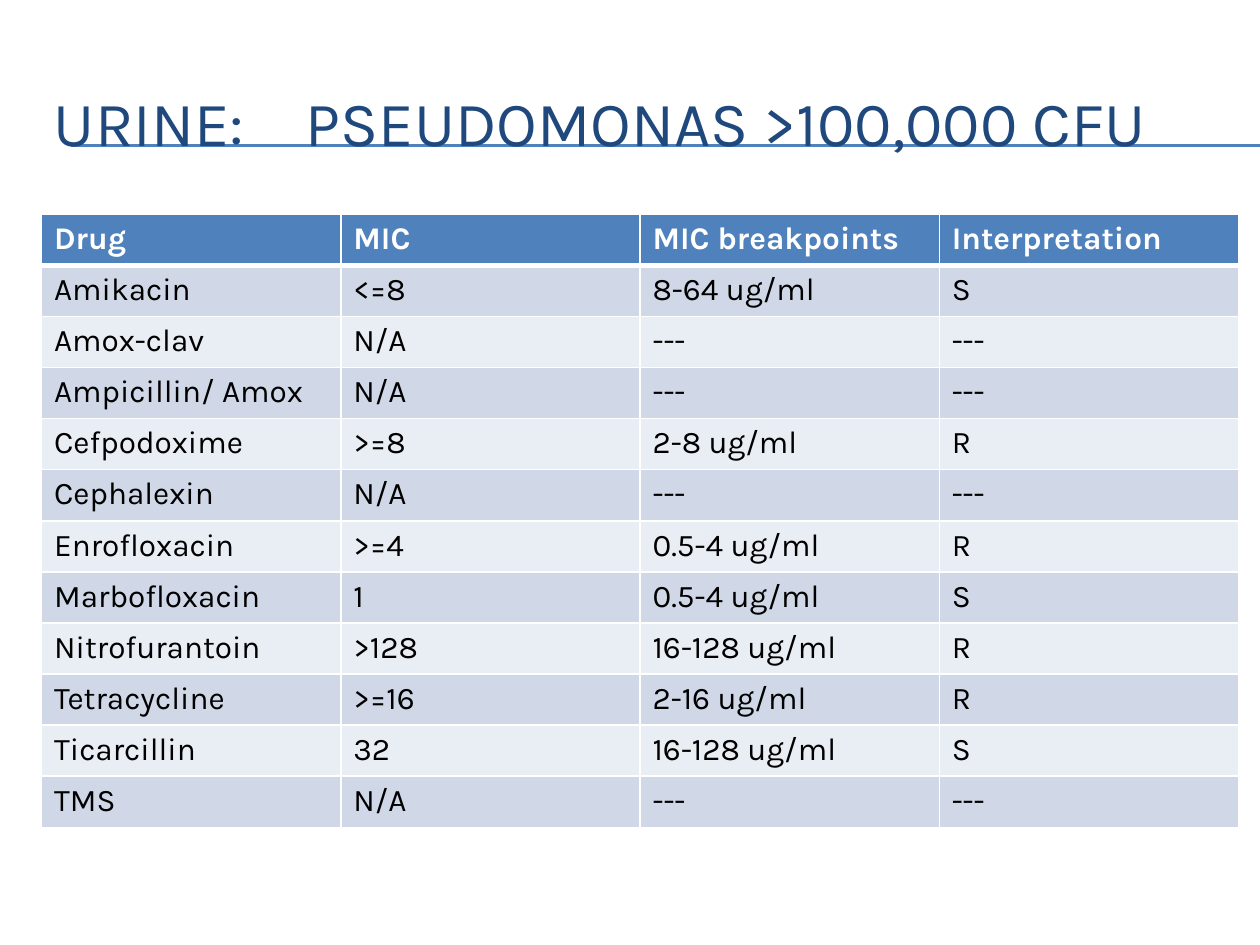
from lxml.etree import SubElement
from pptx import Presentation
from pptx.dml.color import RGBColor
from pptx.enum.shapes import MSO_CONNECTOR
from pptx.enum.text import MSO_ANCHOR
from pptx.oxml.ns import qn
from pptx.util import Inches, Pt

TITLE = "URINE: \tPSEUDOMONAS >100,000 CFU"
HEADER = ("Drug", "MIC", "MIC breakpoints", "Interpretation")
RESULTS = [
    ("Amikacin", "<=8", "8-64 ug/ml", "S"),
    ("Amox-clav", "N/A", "---", "---"),
    ("Ampicillin/ Amox", "N/A", "---", "---"),
    ("Cefpodoxime", ">=8", "2-8 ug/ml", "R"),
    ("Cephalexin", "N/A", "---", "---"),
    ("Enrofloxacin", ">=4", "0.5-4 ug/ml", "R"),
    ("Marbofloxacin", "1", "0.5-4 ug/ml", "S"),
    ("Nitrofurantoin", ">128", "16-128 ug/ml", "R"),
    ("Tetracycline", ">=16", "2-16 ug/ml", "R"),
    ("Ticarcillin", "32", "16-128 ug/ml", "S"),
    ("TMS", "N/A", "---", "---"),
]
FONT = "Karla"
COLORS = {
    "title": "1F497D",
    "accent": "4F81BD",
    "odd": "D0D8E8",
    "even": "E9EDF4",
    "white": "FFFFFF",
    "black": "000000",
}
LEFT, WIDTH = 0.33, 9.5
RULE_LEFT, RULE_YS = 0.56, (1.15, 1.16)
TABLE_TOP, TABLE_HEIGHT = 1.7, 4.87


def rgb(name):
    return RGBColor.from_string(COLORS[name])


def style_text(text_frame, size, color, bold=False):
    for run in text_frame.paragraphs[0].runs:
        font = run.font
        font.name, font.size, font.bold = FONT, Pt(size), bold
        font.color.rgb = rgb(color)


def set_borders(cell, top, bottom):
    """White borders; widths in points, with 1 pt at the sides."""
    properties = cell._tc.get_or_add_tcPr()
    widths = {"a:lnL": 1, "a:lnR": 1, "a:lnT": top, "a:lnB": bottom}
    for position, (tag, width) in enumerate(widths.items()):
        border = properties.makeelement(qn(tag), {"w": str(Pt(width))})
        fill = SubElement(border, qn("a:solidFill"))
        SubElement(fill, qn("a:srgbClr"), val=COLORS["white"])
        properties.insert(position, border)


def add_rules(slide):
    for y in RULE_YS:
        rule = slide.shapes.add_connector(
            MSO_CONNECTOR.STRAIGHT, Inches(RULE_LEFT), Inches(y), Inches(10), Inches(y))
        rule.line.color.rgb = rgb("accent")
        rule.line.width = Pt(0.75)
        SubElement(rule._element.spPr, qn("a:effectLst"))


def add_title(slide):
    title = slide.shapes.add_textbox(Inches(LEFT), Inches(0.5), Inches(WIDTH), Inches(0.92))
    frame = title.text_frame
    frame.word_wrap = True
    frame.vertical_anchor = MSO_ANCHOR.MIDDLE
    frame.text = TITLE
    style_text(frame, 36, "title")


def add_results(slide):
    rows = [HEADER, *RESULTS]
    table = slide.shapes.add_table(
        len(rows), len(HEADER), Inches(LEFT), Inches(TABLE_TOP),
        Inches(WIDTH), Inches(TABLE_HEIGHT)).table
    for r, values in enumerate(rows):
        is_header = r == 0
        band = "accent" if is_header else ("even", "odd")[r % 2]
        for c, value in enumerate(values):
            cell = table.cell(r, c)
            cell.text = value
            style_text(cell.text_frame, 18, "white" if is_header else "black", is_header)
            cell.fill.solid()
            cell.fill.fore_color.rgb = rgb(band)
            set_borders(cell, top=3 if r == 1 else 1, bottom=3 if is_header else 1)


def main():
    prs = Presentation()
    prs.slide_width, prs.slide_height = Inches(10), Inches(7.5)
    slide = prs.slides.add_slide(prs.slide_layouts[6])
    add_rules(slide)
    add_title(slide)
    add_results(slide)
    prs.save("out.pptx")


if __name__ == "__main__":
    main()
